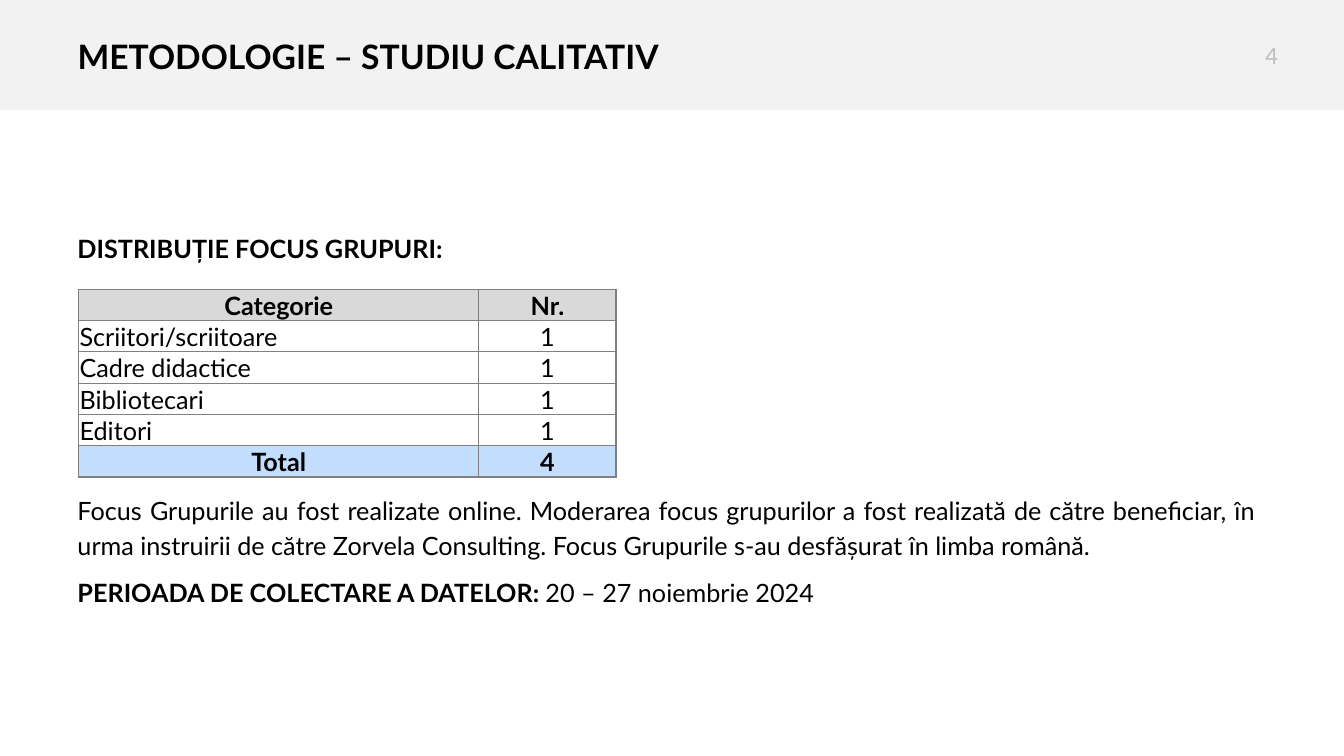
from lxml import etree
from pptx import Presentation
from pptx.dml.color import RGBColor
from pptx.enum.shapes import MSO_SHAPE
from pptx.enum.text import MSO_ANCHOR, PP_ALIGN
from pptx.oxml.ns import qn
from pptx.util import Inches, Pt


def add_run(paragraph, text, size=18, bold=False, color="000000", font="Lato"):
    run = paragraph.add_run()
    run.text = text
    run.font.name = font
    run.font.size = Pt(size)
    run.font.bold = bold
    run.font.color.rgb = RGBColor.from_string(color)


def add_text_frame(slide, left, top, width, height):
    text_frame = slide.shapes.add_textbox(
        Inches(left), Inches(top), Inches(width), Inches(height)).text_frame
    text_frame.word_wrap = True
    return text_frame


presentation = Presentation()
presentation.slide_width = Inches(13.33)
presentation.slide_height = Inches(7.5)
slide = presentation.slides.add_slide(presentation.slide_layouts[5])

# Header band, placed behind the title
band = slide.shapes.add_shape(
    MSO_SHAPE.RECTANGLE, 0, 0, presentation.slide_width, Inches(1.09))
band.shadow.inherit = False
band.fill.solid()
band.fill.fore_color.rgb = RGBColor.from_string("F2F2F2")
band.line.fill.background()
slide.shapes._spTree.insert(2, band._element)

title = slide.shapes.title
title.left, title.top = Inches(0.67), Inches(0.02)
title.width, title.height = Inches(8.58), Inches(1.08)
title.text_frame.vertical_anchor = MSO_ANCHOR.MIDDLE
title_paragraph = title.text_frame.paragraphs[0]
title_paragraph.alignment = PP_ALIGN.LEFT
add_run(title_paragraph, "METODOLOGIE – STUDIU CALITATIV", size=24, bold=True)

page_number = add_text_frame(slide, 11.89, 0.34, 1.44, 0.4).paragraphs[0]
page_number.alignment = PP_ALIGN.CENTER
add_run(page_number, "4", color="BFBFBF", font="Calibri")

heading = add_text_frame(slide, 0.67, 2.27, 11.88, 0.4).paragraphs[0]
add_run(heading, "DISTRIBUȚIE FOCUS GRUPURI:", bold=True)

# Focus group table
rows = [
    ("Categorie", "Nr."),
    ("Scriitori/scriitoare", "1"),
    ("Cadre didactice", "1"),
    ("Bibliotecari", "1"),
    ("Editori", "1"),
    ("Total", "4"),
]
row_fills = {0: "D9D9D9", len(rows) - 1: "C3DDFF"}
column_widths = [3.97, 1.36]
row_height = 0.31
table = slide.shapes.add_table(
    len(rows), len(column_widths), Inches(0.78), Inches(2.87),
    Inches(sum(column_widths)), Inches(row_height * len(rows))).table
for column, width in zip(table.columns, column_widths):
    column.width = Inches(width)

for row_index, row in enumerate(rows):
    table.rows[row_index].height = Inches(row_height)
    emphasized = row_index in row_fills
    for column_index, text in enumerate(row):
        cell = table.cell(row_index, column_index)
        cell.margin_left = cell.margin_right = cell.margin_top = Inches(0.01)
        cell.margin_bottom = 0
        cell.vertical_anchor = MSO_ANCHOR.MIDDLE
        paragraph = cell.text_frame.paragraphs[0]
        centered = emphasized or column_index == 1
        paragraph.alignment = PP_ALIGN.CENTER if centered else PP_ALIGN.LEFT
        add_run(paragraph, text, bold=emphasized)

        properties = cell._tc.get_or_add_tcPr()
        for side in ("a:lnL", "a:lnR", "a:lnT", "a:lnB"):
            border = etree.SubElement(properties, qn(side), w=str(Pt(1)))
            border_fill = etree.SubElement(border, qn("a:solidFill"))
            etree.SubElement(border_fill, qn("a:srgbClr"), val="808080")
        if emphasized:
            cell.fill.solid()
            cell.fill.fore_color.rgb = RGBColor.from_string(row_fills[row_index])
        else:
            cell.fill.background()

# Notes below the table
notes = add_text_frame(slide, 0.67, 4.82, 11.88, 1.29)
moderation = notes.paragraphs[0]
moderation.alignment = PP_ALIGN.JUSTIFY
moderation.line_spacing = 1.15
moderation.space_after = Pt(6)
add_run(moderation, "Focus Grupurile au fost realizate online. Moderarea focus "
        "grupurilor a fost realizată de către beneficiar, în urma instruirii "
        "de către Zorvela Consulting. Focus Grupurile s-au desfășurat în "
        "limba română.")

period = notes.add_paragraph()
period.space_before = period.space_after = Pt(6)
add_run(period, "PERIOADA DE COLECTARE A DATELOR: ", bold=True)
add_run(period, "20 – 27 noiembrie 2024")

presentation.save("out.pptx")
